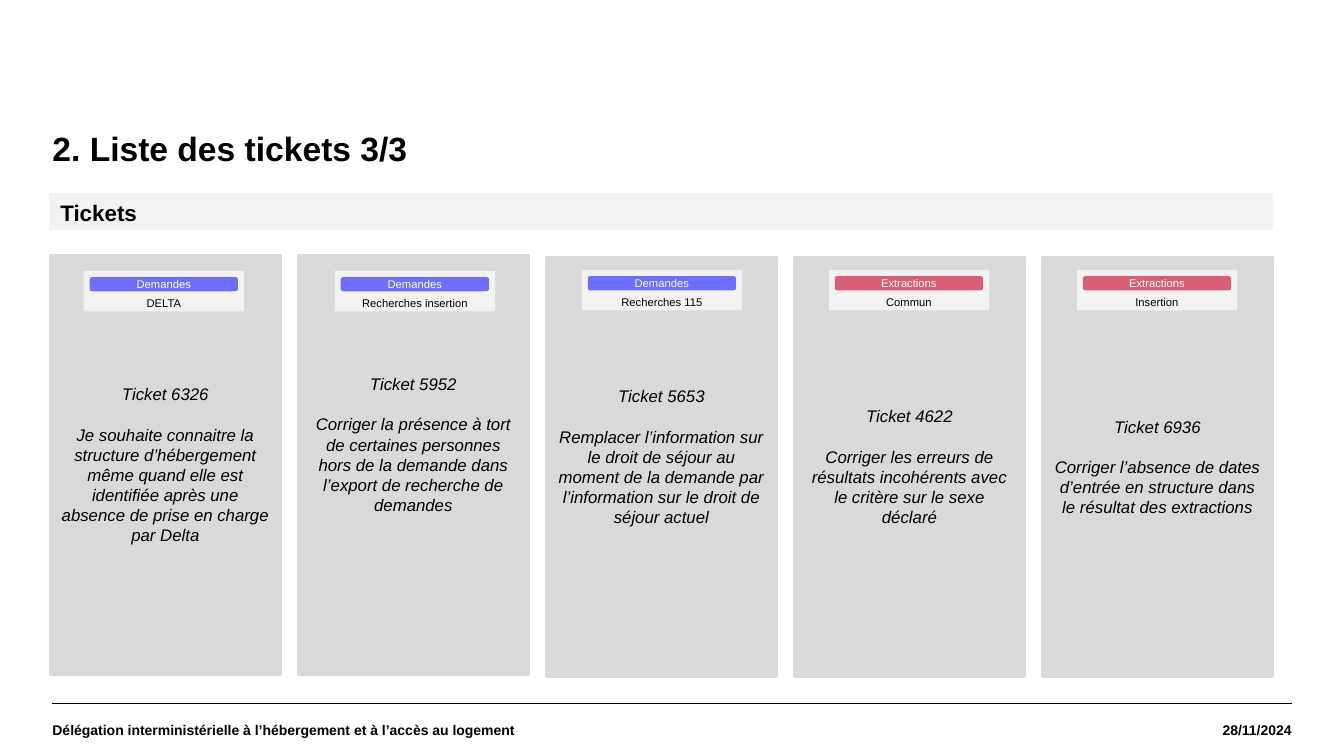
from lxml import etree
from pptx import Presentation
from pptx.dml.color import RGBColor
from pptx.enum.shapes import MSO_CONNECTOR, MSO_SHAPE
from pptx.enum.text import MSO_ANCHOR as ANCHOR, PP_ALIGN as ALIGN
from pptx.oxml.ns import qn
from pptx.util import Inches, Pt

COLORS = {
    "black": "000000",
    "white": "FFFFFF",
    "card": "D9D9D9",
    "light": "F2F2F2",
    "Demandes": "6D6DFF",
    "Extractions": "D85D75",
}


def add_box(shapes, kind, left, top, width, height, color, outlined=False):
    """Add a flat filled shape, with an outline of its own colour if asked."""
    shape = shapes.add_shape(kind, Inches(left), Inches(top), Inches(width), Inches(height))
    shape.shadow.inherit = False
    shape.fill.solid()
    shape.fill.fore_color.rgb = RGBColor.from_string(COLORS[color])
    if outlined:
        shape.line.color.rgb = RGBColor.from_string(COLORS[color])
        shape.line.width = Pt(2)
    else:
        shape.line.fill.background()
    return shape


def write_text(shape, lines, size, align=ALIGN.LEFT, anchor=ANCHOR.TOP, color="black",
               bold=False, italic=False, gap=0, insets=(0.1, 0.05, 0.1, 0.05)):
    """Write one paragraph per line; gap is the space in points between them."""
    frame = shape.text_frame
    frame.word_wrap = True
    frame.vertical_anchor = anchor
    (frame.margin_left, frame.margin_top,
     frame.margin_right, frame.margin_bottom) = map(Inches, insets)
    for index, line in enumerate(lines):
        paragraph = frame.add_paragraph() if index else frame.paragraphs[0]
        paragraph.alignment = align
        paragraph.space_before = Pt(gap if index else 0)
        run = paragraph.add_run()
        run.text = line
        run.font.name = "Arial"
        run.font.size = Pt(size)
        run.font.bold = bold
        run.font.italic = italic
        run.font.color.rgb = RGBColor.from_string(COLORS[color])


presentation = Presentation()
presentation.slide_width = Inches(13.33)
presentation.slide_height = Inches(7.5)
slide = presentation.slides.add_slide(presentation.slide_layouts[5])
no_insets = (0, 0, 0, 0)

# Title and section bar
title = slide.shapes.title
title.left, title.top, title.width, title.height = map(Inches, (0.52, 1.31, 12.28, 1.05))
write_text(title, ["2. Liste des tickets 3/3"], 24, bold=True, insets=no_insets)
title.text_frame.paragraphs[0].line_spacing = 0.9

section_bar = add_box(slide.shapes, MSO_SHAPE.RECTANGLE, 0.5, 1.93, 12.11, 0.34, "light", True)
write_text(section_bar, ["Tickets"], 16, bold=True)

# Ticket cards: card top, badge left and top, category, module,
# blank lines kept under the text, number, request
tickets = [
    (2.53, 0.83, 2.69, "Demandes", "DELTA", 0, "Ticket 6326",
     "Je souhaite connaitre la structure d’hébergement même quand elle est identifiée "
     "après une absence de prise en charge par Delta"),
    (2.53, 3.32, 2.69, "Demandes", "Recherches insertion", 2, "Ticket 5952",
     "Corriger la présence à tort de certaines personnes hors de la demande dans "
     "l’export de recherche de demandes"),
    (2.55, 5.77, 2.68, "Demandes", "Recherches 115", 1, "Ticket 5653",
     "Remplacer l’information sur le droit de séjour au moment de la demande par "
     "l’information sur le droit de séjour actuel"),
    (2.55, 8.22, 2.68, "Extractions", "Commun", 0, "Ticket 4622",
     "Corriger les erreurs de résultats incohérents avec le critère sur le sexe déclaré"),
    (2.55, 10.68, 2.68, "Extractions", "Insertion", 0, "Ticket 6936",
     "Corriger l’absence de dates d’entrée en structure dans le résultat des extractions"),
]
card_step = 2.46
line_height = 0.2

for column, ticket in enumerate(tickets):
    card_top, badge_left, badge_top, category, module, blank_lines, number, request = ticket
    card = add_box(slide.shapes, MSO_SHAPE.RECTANGLE,
                   0.5 + column * card_step, card_top, 2.28, 4.16, "card", True)
    write_text(card, [number, request], 12, ALIGN.CENTER, ANCHOR.MIDDLE, italic=True, gap=14.4,
               insets=(0.1, 0.05, 0.1, 0.05 + blank_lines * line_height))

    badge = slide.shapes.add_group_shape().shapes
    add_box(badge, MSO_SHAPE.RECTANGLE, badge_left, badge_top, 1.59, 0.4, "light")
    pill = add_box(badge, MSO_SHAPE.ROUNDED_RECTANGLE,
                   badge_left + 0.06, badge_top + 0.06, 1.47, 0.14, category)
    write_text(pill, [category], 8, ALIGN.CENTER, ANCHOR.MIDDLE, "white", insets=no_insets)
    label = badge.add_textbox(Inches(badge_left), Inches(badge_top + 0.2),
                              Inches(1.59), Inches(0.24))
    write_text(label, [module], 8, ALIGN.CENTER)

# Footer
rule = slide.shapes.add_connector(MSO_CONNECTOR.STRAIGHT, Inches(0.52), Inches(6.98),
                                  Inches(12.81), Inches(6.98))
rule.line.color.rgb = RGBColor.from_string(COLORS["black"])
rule.line.width = Pt(0.8)
etree.SubElement(rule._element.spPr, qn("a:effectLst"))

footers = [
    (0.52, 8.61, ALIGN.LEFT, "Délégation interministérielle à l’hébergement et à l’accès au logement"),
    (11.1, 1.71, ALIGN.RIGHT, "28/11/2024"),
]
for left, width, align, text in footers:
    footer = slide.shapes.add_textbox(Inches(left), Inches(6.98), Inches(width), Inches(0.52))
    write_text(footer, [text], 10, align, ANCHOR.MIDDLE, bold=True, insets=no_insets)

presentation.save("out.pptx")
